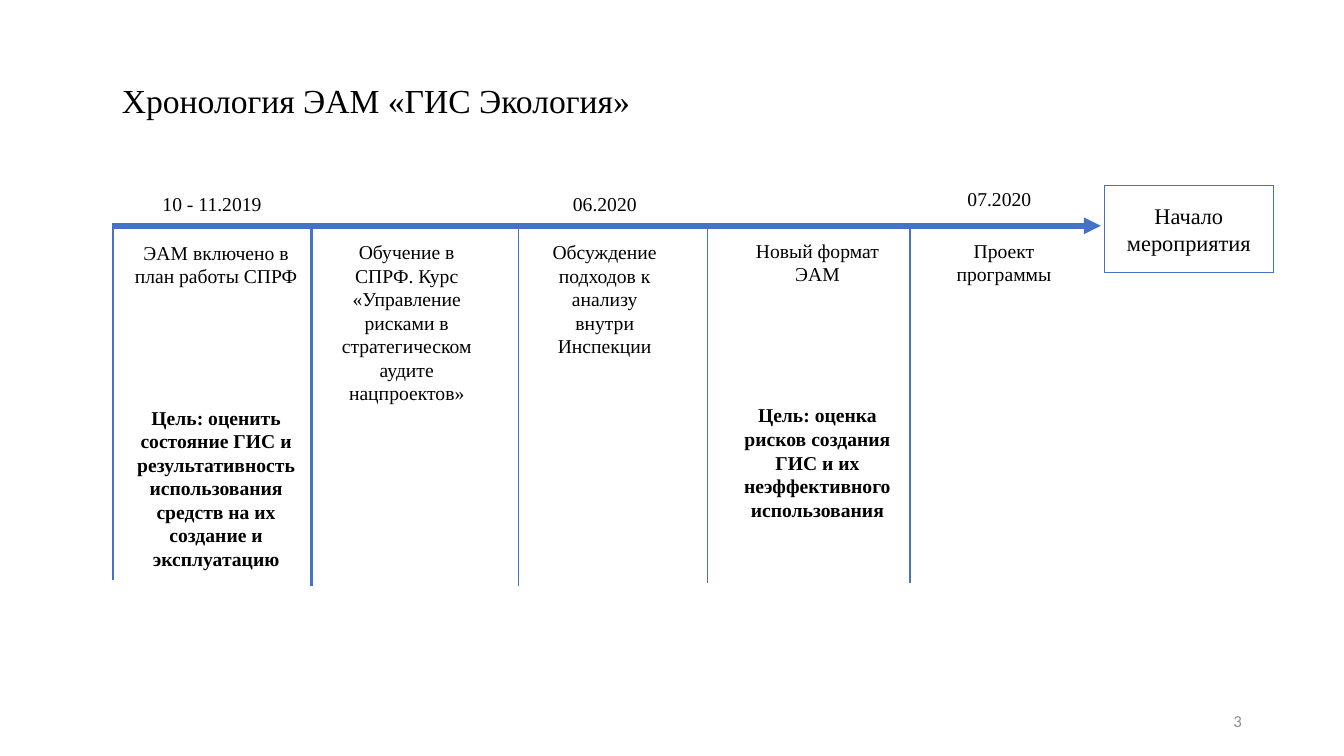
import pptx
import pptx.util
import pptx.dml.color
import pptx.enum.shapes
import pptx.enum.text
import pptx.oxml
import pptx.oxml.ns
from pptx.util import Pt

SERIF = "Times New Roman"
BLACK = "000000"
BLUE = "4472C4"
GREY = "8C8C8C"
ALIGN = pptx.enum.text.PP_ALIGN
ANCHOR = pptx.enum.text.MSO_ANCHOR
AXIS_Y = 161.3
DIVIDER_HEIGHT = 254.9
GOAL_GAP = 84

# left, top, width, height, step, goal
STAGES = [
    (87.8, 168.5, 133.2, 244.8, "ЭАМ включено в план работы СПРФ",
     "Цель: оценить состояние ГИС и результативность использования "
     "средств на их создание и эксплуатацию"),
    (229.7, 167.8, 121.7, 126, "Обучение в СПРФ. Курс «Управление рисками "
     "в стратегическом аудите нацпроектов»", None),
    (379.4, 167.8, 105.1, 92.2,
     "Обсуждение подходов к анализу внутри Инспекции", None),
    (517.7, 167, 132.5, 227.5, "Новый формат ЭАМ",
     "Цель: оценка рисков создания ГИС и их неэффективного использования"),
    (664.6, 167, 105.1, 41, "Проект программы", None),
]

# left, top, width, date
DATES = [
    (91.4, 133.9, 120.2, "10 - 11.2019"),
    (254.2, 133.2, 355.7, "06.2020"),
    (653.8, 130.3, 120.2, "07.2020"),
]

# x, top, line width
DIVIDERS = [
    (80.6, 159.1, 1.5),
    (222.5, 163.4, 1.5),
    (370.1, 163.4, 0.5),
    (505.4, AXIS_Y, 0.5),
    (650.2, AXIS_Y, 1.5),
]


def rgb(value):
    return pptx.dml.color.RGBColor.from_string(value)


def write(p, text, size, align, font=SERIF, color=BLACK, bold=False):
    p.alignment = align
    r = p.add_run()
    r.text = text
    r.font.name = font
    r.font.size = Pt(size)
    r.font.bold = bold
    r.font.color.rgb = rgb(color)


def add_text(s, box, text, size=14, align=ALIGN.CENTER, anchor=ANCHOR.TOP, **style):
    sp = s.shapes.add_textbox(*map(Pt, box))
    tf = sp.text_frame
    tf.word_wrap = True
    tf.vertical_anchor = anchor
    write(tf.paragraphs[0], text, size, align, **style)
    return tf


def add_stage(s, box, step, goal):
    tf = add_text(s, box, step)
    if goal:
        p = tf.add_paragraph()
        p.space_before = Pt(GOAL_GAP)
        write(p, goal, 14, ALIGN.CENTER, bold=True)


def add_line(s, x1, y1, x2, y2, width, arrow=False):
    line = s.shapes.add_connector(
        pptx.enum.shapes.MSO_CONNECTOR.STRAIGHT, Pt(x1), Pt(y1), Pt(x2), Pt(y2))
    line.line.color.rgb = rgb(BLUE)
    line.line.width = Pt(width)
    if arrow:
        tail = pptx.oxml.parse_xml(
            f'<a:tailEnd {pptx.oxml.ns.nsdecls("a")} type="triangle"/>')
        line.line._get_or_add_ln().append(tail)
    line._element.spPr.append(
        pptx.oxml.parse_xml(f'<a:effectLst {pptx.oxml.ns.nsdecls("a")}/>'))


def add_frame(s, box, text):
    sp = s.shapes.add_shape(pptx.enum.shapes.MSO_SHAPE.RECTANGLE, *map(Pt, box))
    sp.shadow.inherit = False
    sp.fill.background()
    sp.line.color.rgb = rgb(BLUE)
    sp.line.width = Pt(0.5)
    tf = sp.text_frame
    tf.word_wrap = True
    tf.vertical_anchor = ANCHOR.MIDDLE
    write(tf.paragraphs[0], text, 16, ALIGN.CENTER)


def main():
    prs = pptx.Presentation()
    prs.slide_width = Pt(960)
    prs.slide_height = Pt(540)
    s = prs.slides.add_slide(prs.slide_layouts[6])

    title = add_text(s, (79.9, 42.5, 850.3, 61.9), "Хронология ЭАМ «ГИС Экология»",
                     size=24, align=ALIGN.LEFT, anchor=ANCHOR.MIDDLE)
    title.paragraphs[0].line_spacing = 0.9
    add_text(s, (678.2, 500.4, 216, 28.8), "3", size=12, align=ALIGN.RIGHT,
             anchor=ANCHOR.MIDDLE, font="Calibri", color=GREY)

    add_line(s, 80.6, AXIS_Y, 786.2, AXIS_Y, 4, arrow=True)
    for x, top, width in DIVIDERS:
        add_line(s, x, top, x, top + DIVIDER_HEIGHT, width)
    for *box, step, goal in STAGES:
        add_stage(s, box, step, goal)
    for left, top, width, date in DATES:
        add_text(s, (left, top, width, 24.5), date)
    add_frame(s, (789.1, 132.5, 120.2, 61.9), "Начало мероприятия")

    prs.save("out.pptx")


if __name__ == "__main__":
    main()
